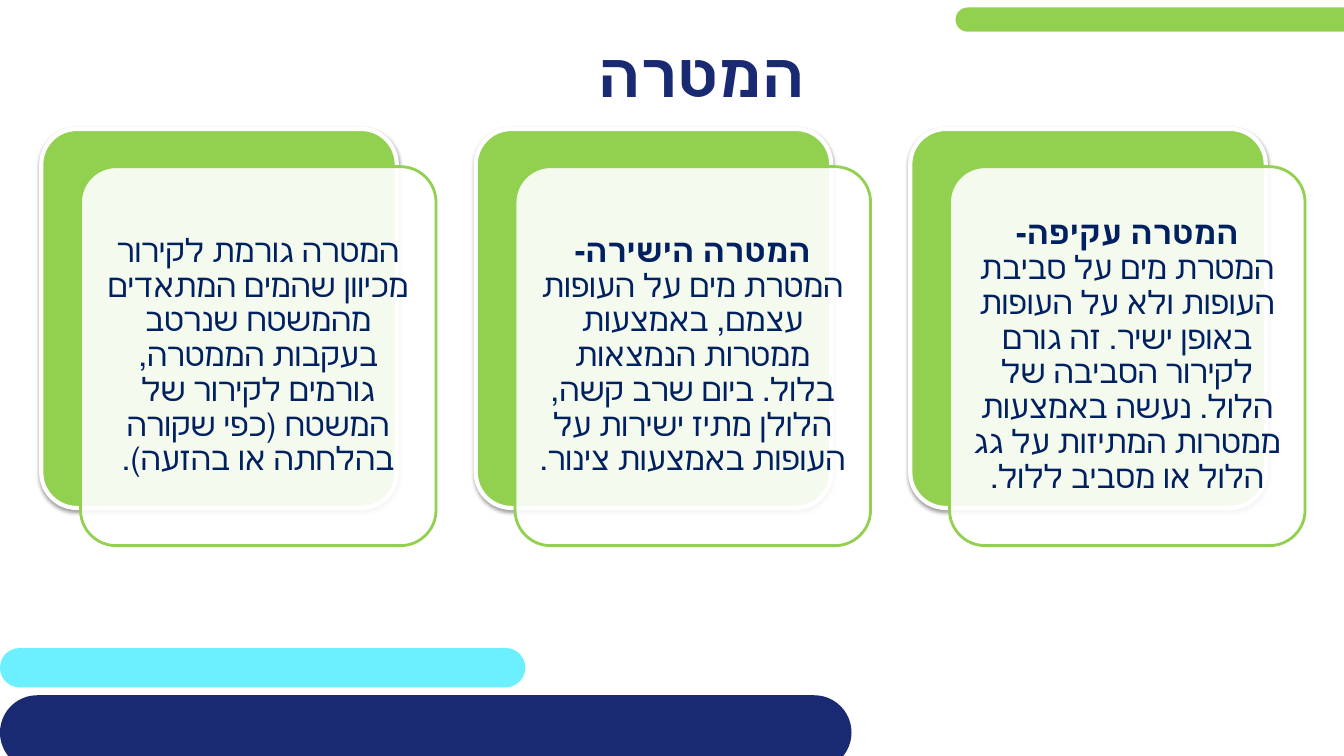
from lxml.etree import SubElement
from pptx import Presentation
from pptx.dml.color import RGBColor
from pptx.enum.lang import MSO_LANGUAGE_ID
from pptx.enum.shapes import MSO_SHAPE
from pptx.enum.text import MSO_ANCHOR, MSO_AUTO_SIZE, PP_ALIGN
from pptx.oxml import parse_xml
from pptx.oxml.ns import nsdecls, qn
from pptx.util import Cm, Pt

WHITE = RGBColor(0xFF, 0xFF, 0xFF)
GREEN = RGBColor(0x92, 0xD0, 0x50)
CYAN = RGBColor(0x6C, 0xF0, 0xFF)
NAVY = RGBColor(0x19, 0x2A, 0x72)
TEXT_BLUE = RGBColor(0x00, 0x20, 0x60)

CARD_LEFT, CARD_TOP, CARD_STEP = 1.04, 3.25, 10.95
CARD_WIDTH, CARD_HEIGHT = 8.96, 9.55
PANEL_SHIFT_X, PANEL_SHIFT_Y = 0.99, 0.95
TEXT_MARGIN = 0.27

BARS = [
    (0, 16.33, 13.24, 0.99, CYAN),
    (24.08, 0.19, 14.73, 0.61, GREEN),
    (0, 17.52, 21.46, 1.88, NAVY),
]

# Cards from left to right: bold lead-in, text
CARDS = [
    ("", "המטרה גורמת לקירור מכיוון שהמים המתאדים מהמשטח שנרטב בעקבות "
         "הממטרה, גורמים לקירור של המשטח (כפי שקורה בהלחתה או בהזעה)."),
    ("המטרה הישירה- ",
     "המטרת מים על העופות עצמם, באמצעות ממטרות הנמצאות בלול. "
     "ביום שרב קשה, הלולן מתיז ישירות על העופות באמצעות צינור."),
    ("המטרה עקיפה- ",
     "המטרת מים על סביבת העופות ולא על העופות באופן ישיר. "
     "זה גורם לקירור הסביבה של הלול. נעשה באמצעות "
     "ממטרות המתיזות על גג הלול או מסביב ללול."),
]


class SlideBuilder:
    font_name = "Quicksand"

    def __init__(self, slide):
        self.slide = slide

    def rounded(self, left, top, width, height, fill, radius, line=None, line_width=0):
        shape = self.slide.shapes.add_shape(
            MSO_SHAPE.ROUNDED_RECTANGLE, Cm(left), Cm(top), Cm(width), Cm(height))
        shape.adjustments[0] = radius
        shape.shadow.inherit = False
        shape.fill.solid()
        shape.fill.fore_color.rgb = fill
        if line is None:
            shape.line.fill.background()
        else:
            shape.line.color.rgb = line
            shape.line.width = Pt(line_width)
        return shape

    def drop_shadow(self, shape):
        effects = shape._element.spPr.find(qn("a:effectLst"))
        effects.append(parse_xml(
            f'<a:outerShdw {nsdecls("a")} blurRad="{Pt(3.1)}" dist="{Pt(1.6)}" '
            'dir="5400000" rotWithShape="0"><a:srgbClr val="000000">'
            '<a:alpha val="38000"/></a:srgbClr></a:outerShdw>'))

    def translucent(self, shape, percent):
        color = shape._element.spPr.find(qn("a:solidFill"))[0]
        SubElement(color, qn("a:alpha")).set("val", str(percent * 1000))

    def hebrew(self, paragraph, size, color, alignment):
        """Format a right-to-left paragraph."""
        paragraph.alignment = alignment
        paragraph.line_spacing = 0.9
        paragraph.font.size = Pt(size)
        paragraph.font.color.rgb = color
        paragraph.font.name = self.font_name
        paragraph.font.language_id = MSO_LANGUAGE_ID.HEBREW
        paragraph._p.get_or_add_pPr().set("rtl", "1")

    def title(self, text, left, top, width, height):
        title = self.slide.shapes.title
        title.left, title.top = Cm(left), Cm(top)
        title.width, title.height = Cm(width), Cm(height)
        frame = title.text_frame
        frame.text = text
        frame.auto_size = MSO_AUTO_SIZE.NONE
        frame.vertical_anchor = MSO_ANCHOR.MIDDLE
        paragraph = frame.paragraphs[0]
        self.hebrew(paragraph, 44, NAVY, PP_ALIGN.RIGHT)
        paragraph.font.bold = True

    def text(self, lead, body, left, top, width, height):
        box = self.slide.shapes.add_textbox(Cm(left), Cm(top), Cm(width), Cm(height))
        frame = box.text_frame
        frame.word_wrap = True
        frame.vertical_anchor = MSO_ANCHOR.MIDDLE
        frame.margin_left = frame.margin_right = Cm(0.25)
        frame.margin_top = frame.margin_bottom = Cm(0.25)
        paragraph = frame.paragraphs[0]
        if lead:
            run = paragraph.add_run()
            run.text = lead
            run.font.bold = True
        paragraph.add_run().text = body
        self.hebrew(paragraph, 23, TEXT_BLUE, PP_ALIGN.CENTER)

    def card(self, lead, body, left, top):
        back = self.rounded(left, top, CARD_WIDTH, CARD_HEIGHT, GREEN, 0.1, WHITE, 3)
        self.drop_shadow(back)
        left, top = left + PANEL_SHIFT_X, top + PANEL_SHIFT_Y
        panel = self.rounded(left, top, CARD_WIDTH, CARD_HEIGHT, WHITE, 0.1, GREEN, 2)
        self.translucent(panel, 90)
        self.text(lead, body, left + TEXT_MARGIN, top + TEXT_MARGIN,
                  CARD_WIDTH - 2 * TEXT_MARGIN, CARD_HEIGHT - 2 * TEXT_MARGIN)


def main():
    presentation = Presentation()
    presentation.slide_width, presentation.slide_height = Cm(33.87), Cm(19.05)
    title_only = presentation.slide_layouts[5]
    builder = SlideBuilder(presentation.slides.add_slide(title_only))
    for left, top, width, height, color in BARS:
        builder.rounded(left, top, width, height, color, 0.5)
    builder.title("המטרה", -1.91, 1.4, 22.43, 1.12)
    for index, (lead, body) in enumerate(CARDS):
        builder.card(lead, body, CARD_LEFT + index * CARD_STEP, CARD_TOP)
    presentation.save("out.pptx")


if __name__ == "__main__":
    main()
